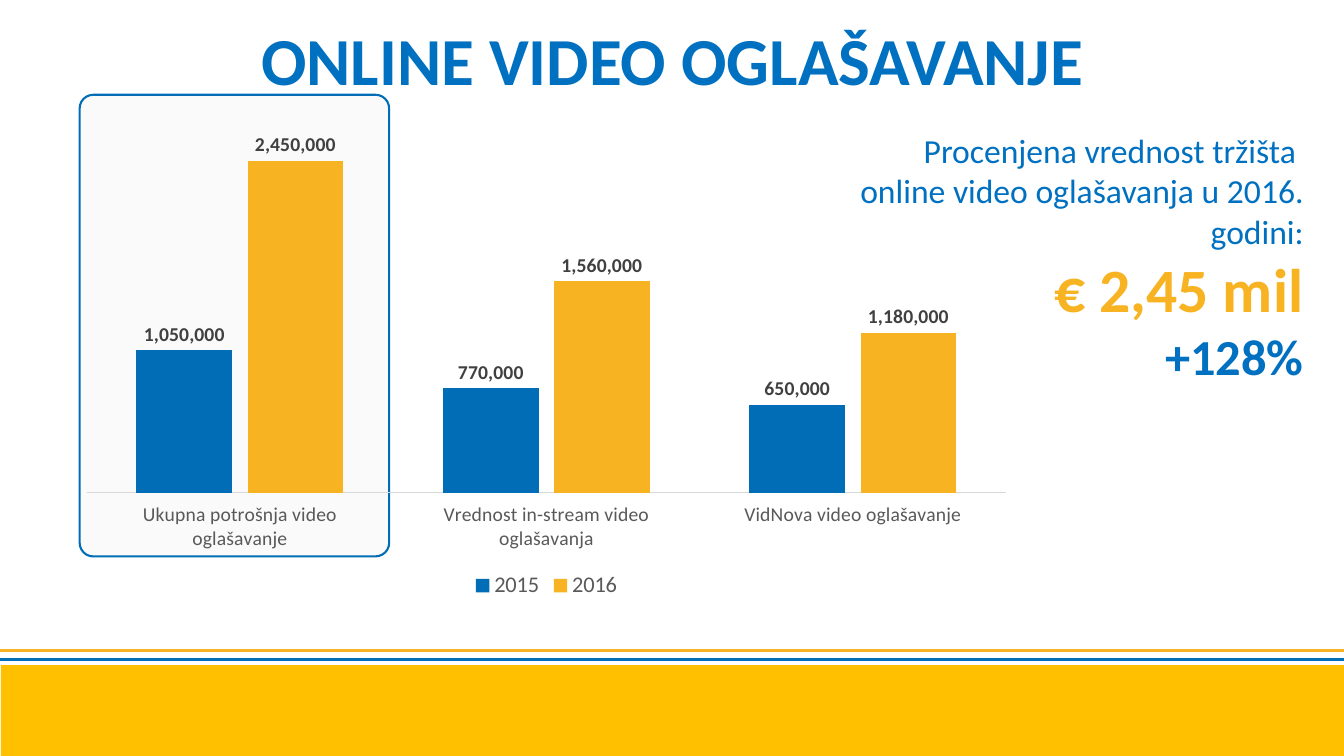
from lxml.etree import SubElement
from pptx import Presentation
from pptx.chart.data import CategoryChartData
from pptx.dml.color import RGBColor
from pptx.enum.chart import (XL_CHART_TYPE, XL_LABEL_POSITION,
                             XL_LEGEND_POSITION, XL_TICK_LABEL_POSITION,
                             XL_TICK_MARK)
from pptx.enum.shapes import MSO_CONNECTOR, MSO_SHAPE
from pptx.enum.text import MSO_ANCHOR, PP_ALIGN
from pptx.oxml import parse_xml
from pptx.oxml.ns import nsdecls, qn
from pptx.util import Inches, Pt

BLUE = RGBColor(0x01, 0x6D, 0xB7)
RULE = RGBColor(0x00, 0x6F, 0xB7)
SKY = RGBColor(0x00, 0x70, 0xC0)
GOLD = RGBColor(0xF8, 0xB3, 0x22)
AMBER = RGBColor(0xFF, 0xC0, 0x00)
PALE = RGBColor(0xF2, 0xF2, 0xF2)
LIGHT = RGBColor(0xD9, 0xD9, 0xD9)
GREY = RGBColor(0x59, 0x59, 0x59)
DARK = RGBColor(0x40, 0x40, 0x40)
BLACK = RGBColor(0, 0, 0)
FACE = "Calibri"
FORMAT = '_(* #,##0_);_(* \\(#,##0\\);_(* "-"??_);_('

deck = Presentation()
deck.slide_width, deck.slide_height = Inches(13.33), Inches(7.5)
slide = deck.slides.add_slide(deck.slide_layouts[6])
shapes = slide.shapes


def style(font, size, color, bold=False):
    font.name, font.size, font.bold = FACE, Pt(size), bold
    font.color.rgb = color


def write(frame, text, size=24, color=SKY, bold=False, align=PP_ALIGN.RIGHT):
    """Add one paragraph, filling the empty first one before adding more."""
    para = frame.paragraphs[0] if not frame.text else frame.add_paragraph()
    para.alignment = align
    run = para.add_run()
    run.text = text
    style(run.font, size, color, bold)


# Footer band and rules
band = shapes.add_shape(MSO_SHAPE.RECTANGLE, Inches(0.01), Inches(6.6),
                        Inches(13.32), Inches(0.9))
band.shadow.inherit = False
band.fill.solid()
band.fill.fore_color.rgb = AMBER
band.line.fill.background()

for y, color in ((6.45, GOLD), (6.54, RULE)):
    rule = shapes.add_connector(MSO_CONNECTOR.STRAIGHT, 0, Inches(y),
                                deck.slide_width, Inches(y))
    rule.line.color.rgb = color
    rule.line.width = Pt(2.2)
    SubElement(rule.line._get_or_add_ln().getparent(), qn("a:effectLst"))

# Frame around the first group of bars
frame = shapes.add_shape(MSO_SHAPE.ROUNDED_RECTANGLE, Inches(0.79),
                         Inches(0.94), Inches(3.07), Inches(4.58))
frame.adjustments[0] = 0.044
frame.shadow.inherit = False
frame.fill.solid()
frame.fill.fore_color.rgb = PALE
tint = frame.fill._xPr.find(qn("a:solidFill"))[0]
SubElement(tint, qn("a:alpha"), val="36000")
frame.line.color.rgb = BLUE
frame.line.width = Pt(1.5)

# Column chart
data = CategoryChartData(number_format=FORMAT)
data.categories = ["Ukupna potrošnja video oglašavanje",
                   "Vrednost in-stream video oglašavanja",
                   "VidNova video oglašavanje"]
data.add_series("2015", (1050000, 770000, 650000))
data.add_series("2016", (2450000, 1560000, 1180000))
chart = shapes.add_chart(XL_CHART_TYPE.COLUMN_CLUSTERED, Inches(0.67),
                         Inches(0.75), Inches(9.5), Inches(5.24), data).chart
style(chart.font, 10, BLACK)
chart.has_title = False

plot = chart.plots[0]
plot.gap_width, plot.overlap = 104, -16
plot.vary_by_categories = False
for series, color in zip(plot.series, (BLUE, GOLD)):
    series.format.fill.solid()
    series.format.fill.fore_color.rgb = color
    labels = series.data_labels
    labels.show_value = True
    labels.position = XL_LABEL_POSITION.OUTSIDE_END
    labels.number_format = FORMAT
    labels.number_format_is_linked = False
    style(labels.font, 14, DARK, bold=True)

# Axes and legend
groups = chart.category_axis
groups.major_tick_mark = XL_TICK_MARK.NONE
groups.tick_label_position = XL_TICK_LABEL_POSITION.LOW
groups.format.line.color.rgb = LIGHT
groups.format.line.width = Pt(0.75)
style(groups.tick_labels.font, 14, GREY)
scale = chart.value_axis
scale.minimum_scale, scale.maximum_scale = 0, 3000000
scale.has_major_gridlines = False
scale.tick_labels.number_format = FORMAT
scale.tick_labels.number_format_is_linked = False
scale.visible = False
chart.has_legend = True
chart.legend.position = XL_LEGEND_POSITION.BOTTOM
chart.legend.include_in_layout = False
style(chart.legend.font, 16, GREY)

# Fixed inner plot area
area = chart._chartSpace.chart.plotArea
for old in area.findall(qn("c:layout")):
    area.remove(old)
area.insert(0, parse_xml(
    f'<c:layout {nsdecls("c")}><c:manualLayout>'
    '<c:layoutTarget val="inner"/><c:xMode val="edge"/><c:yMode val="edge"/>'
    '<c:x val="0.02"/><c:y val="0.02"/><c:w val="0.96"/><c:h val="0.77"/>'
    '</c:manualLayout></c:layout>'))

# Title and market value
boxes = (
    ((1.22, 0, 10.9, 1.17),
     [("ONLINE VIDEO OGLAŠAVANJE",
       dict(size=48, bold=True, align=PP_ALIGN.CENTER))]),
    ((8.04, 0.75, 4.89, 3.61),
     [("Procenjena vrednost tržišta ", {}),
      ("online video oglašavanja u 2016. godini:", {}),
      ("€ 2,45 mil", dict(size=44, color=GOLD, bold=True)),
      ("+128%", dict(size=36, bold=True))]),
)
for place, lines in boxes:
    body = shapes.add_textbox(*map(Inches, place)).text_frame
    body.word_wrap = True
    body.vertical_anchor = MSO_ANCHOR.MIDDLE
    body.margin_left = body.margin_right = 0
    body.margin_top = body.margin_bottom = 0
    for text, form in lines:
        write(body, text, **form)

deck.save("out.pptx")
